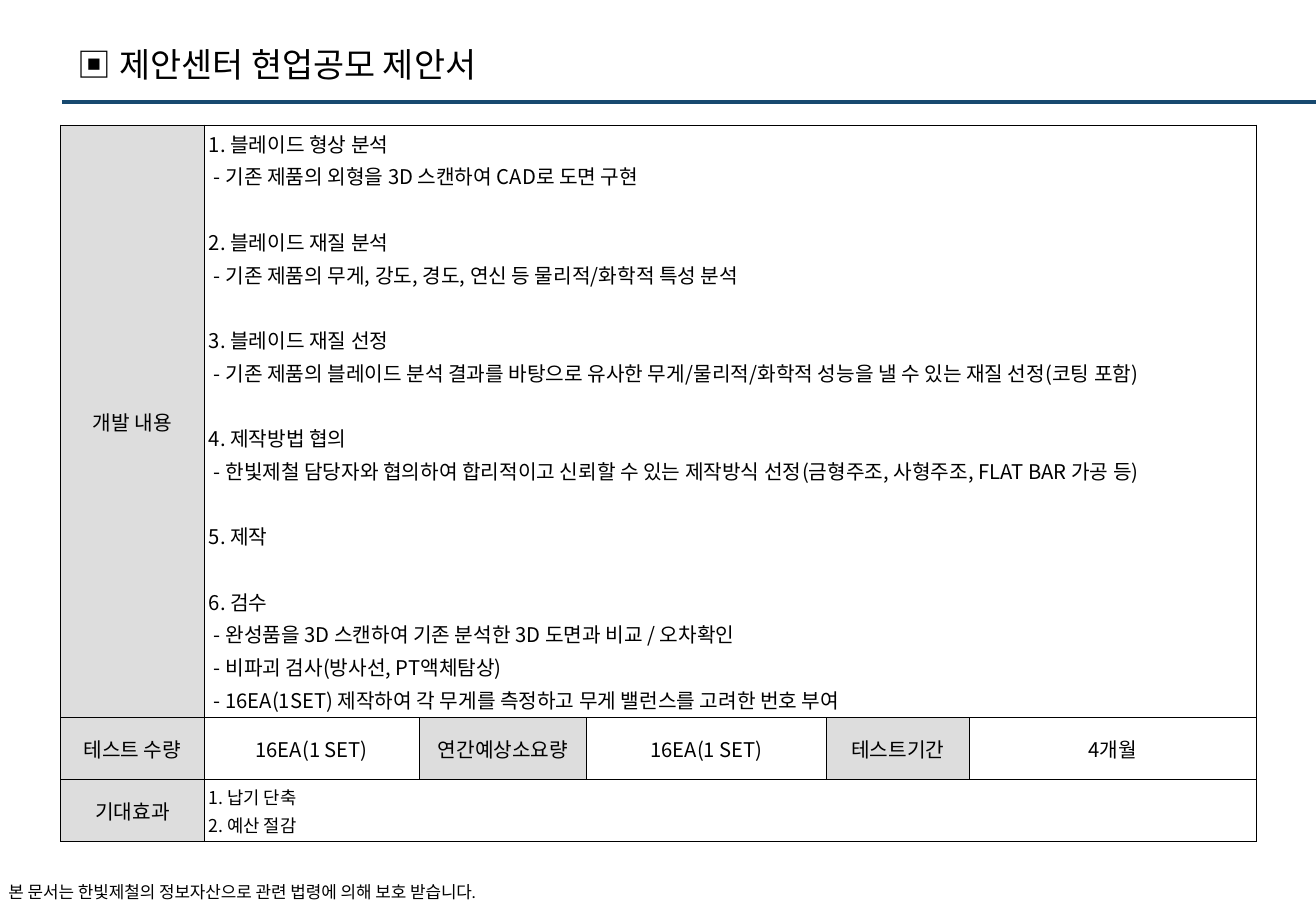
from lxml.etree import SubElement
from pptx import Presentation
from pptx.dml.color import RGBColor
from pptx.enum.shapes import MSO_CONNECTOR
from pptx.enum.text import MSO_ANCHOR, MSO_AUTO_SIZE, PP_ALIGN
from pptx.oxml.ns import qn
from pptx.util import Inches, Pt

TITLE = "▣ 제안센터 현업공모 제안서"
FOOTER = "본 문서는 한빛제철의 정보자산으로 관련 법령에 의해 보호 받습니다."
STEPS = [
    ("1. 블레이드 형상 분석", ["기존 제품의 외형을 3D 스캔하여 CAD로 도면 구현"]),
    ("2. 블레이드 재질 분석", ["기존 제품의 무게, 강도, 경도, 연신 등 물리적/화학적 특성 분석"]),
    ("3. 블레이드 재질 선정",
     ["기존 제품의 블레이드 분석 결과를 바탕으로 유사한 무게/물리적/화학적 성능을 낼 수 있는 재질 선정(코팅 포함)"]),
    ("4. 제작방법 협의",
     ["한빛제철 담당자와 협의하여 합리적이고 신뢰할 수 있는 제작방식 선정(금형주조, 사형주조, FLAT BAR 가공 등)"]),
    ("5. 제작", []),
    ("6. 검수", ["완성품을 3D 스캔하여 기존 분석한 3D 도면과 비교 / 오차확인",
               "비파괴 검사(방사선, PT액체탐상)",
               "16EA(1SET) 제작하여 각 무게를 측정하고 무게 밸런스를 고려한 번호 부여"]),
]
TEST_ROW = ["테스트 수량", "16EA(1 SET)", "연간예상소요량", "16EA(1 SET)", "테스트기간", "4개월"]
EFFECTS = ["1. 납기 단축", "2. 예산 절감"]
COLUMN_WIDTHS = [1.18, 1.77, 1.38, 1.97, 1.18, 2.36]
ROW_HEIGHTS = [4.88, 0.51, 0.51]

BLACK = RGBColor(0x00, 0x00, 0x00)
WHITE = RGBColor(0xFF, 0xFF, 0xFF)
LABEL_GRAY = RGBColor(0xDD, 0xDD, 0xDD)
RULE_BLUE = RGBColor(0x17, 0x49, 0x6F)
KOREAN_FONT = "Noto Sans CJK KR"
STEP_GAP = Pt(20.4)


def format_runs(paragraph, size, font_name=KOREAN_FONT):
    for run in paragraph.runs:
        run.font.size = Pt(size)
        run.font.name = font_name
        run.font.color.rgb = BLACK
        SubElement(run.font._element, qn("a:ea"), typeface=KOREAN_FONT)


def fill_cell(cell, lines, size=12, align=PP_ALIGN.CENTER):
    cell.text_frame.text = "\n".join(lines)
    for index, paragraph in enumerate(cell.text_frame.paragraphs):
        paragraph.alignment = align
        paragraph.space_before = Pt(1 if index else 0)
        paragraph.space_after = Pt(1)
        format_runs(paragraph, size)


def style_cell(cell, color):
    cell.margin_left = cell.margin_right = Inches(0.04)
    cell.margin_top = cell.margin_bottom = Inches(0.02)
    cell.vertical_anchor = MSO_ANCHOR.MIDDLE
    properties = cell._tc.get_or_add_tcPr()
    for side in ("lnL", "lnR", "lnT", "lnB"):
        border = SubElement(properties, qn(f"a:{side}"), w=str(Pt(0.5)))
        border_fill = SubElement(border, qn("a:solidFill"))
        SubElement(border_fill, qn("a:srgbClr"), val=str(BLACK))
    cell.fill.solid()
    cell.fill.fore_color.rgb = color


def add_title(slide):
    title = slide.shapes.title
    title.left, title.top = Inches(0.54), Inches(0.3)
    title.width, title.height = Inches(8.1), Inches(0.46)
    frame = title.text_frame
    frame.text = TITLE
    frame.auto_size = MSO_AUTO_SIZE.NONE
    frame.vertical_anchor = MSO_ANCHOR.MIDDLE
    frame.paragraphs[0].alignment = PP_ALIGN.LEFT
    format_runs(frame.paragraphs[0], 20)


def add_rule(slide, slide_width):
    rule = slide.shapes.add_connector(
        MSO_CONNECTOR.STRAIGHT, Inches(0.51), Inches(0.84), slide_width, Inches(0.84))
    rule.line.color.rgb = RULE_BLUE
    rule.line.width = Pt(2.25)
    SubElement(rule._element.spPr, qn("a:effectLst"))


def add_footer(slide):
    footer = slide.shapes.add_textbox(Inches(0.07), Inches(7.26), Inches(4.2), Inches(0.17))
    frame = footer.text_frame
    frame.margin_left = frame.margin_right = frame.margin_top = frame.margin_bottom = 0
    frame.text = FOOTER
    format_runs(frame.paragraphs[0], 10, "Calibri")


def add_proposal_table(slide):
    table = slide.shapes.add_table(
        len(ROW_HEIGHTS), len(COLUMN_WIDTHS), Inches(0.5), Inches(1.03),
        Inches(sum(COLUMN_WIDTHS)), Inches(sum(ROW_HEIGHTS))).table
    table.first_row = table.horz_banding = False
    for column, width in zip(table.columns, COLUMN_WIDTHS):
        column.width = Inches(width)
    for row, height in zip(table.rows, ROW_HEIGHTS):
        row.height = Inches(height)
    for row_index in range(len(ROW_HEIGHTS)):
        for column_index in range(len(COLUMN_WIDTHS)):
            is_label = column_index == 0 or (row_index == 1 and column_index % 2 == 0)
            style_cell(table.cell(row_index, column_index), LABEL_GRAY if is_label else WHITE)
    for row_index in (0, 2):
        table.cell(row_index, 1).merge(table.cell(row_index, len(COLUMN_WIDTHS) - 1))

    fill_cell(table.cell(0, 0), ["개발 내용"])
    fill_cell(table.cell(2, 0), ["기대효과"])
    for column_index, text in enumerate(TEST_ROW):
        fill_cell(table.cell(1, column_index), [text])
    fill_cell(table.cell(2, 1), EFFECTS, 10.5, PP_ALIGN.LEFT)

    headings = [heading for heading, _ in STEPS]
    lines = [line for heading, details in STEPS
             for line in [heading] + [f"- {detail}" for detail in details]]
    steps_cell = table.cell(0, 1)
    fill_cell(steps_cell, lines, align=PP_ALIGN.LEFT)
    for paragraph in steps_cell.text_frame.paragraphs:
        if paragraph.text not in headings:
            paragraph._p.get_or_add_pPr().set("marL", str(Inches(0.04)))
        elif paragraph.text != headings[0]:
            paragraph.space_before = STEP_GAP


def main():
    """Build the proposal slide and save it."""
    presentation = Presentation()
    presentation.slide_width, presentation.slide_height = Inches(10.83), Inches(7.5)
    slide = presentation.slides.add_slide(presentation.slide_layouts[5])
    add_footer(slide)
    add_rule(slide, presentation.slide_width)
    add_title(slide)
    add_proposal_table(slide)
    presentation.save("out.pptx")


if __name__ == "__main__":
    main()
